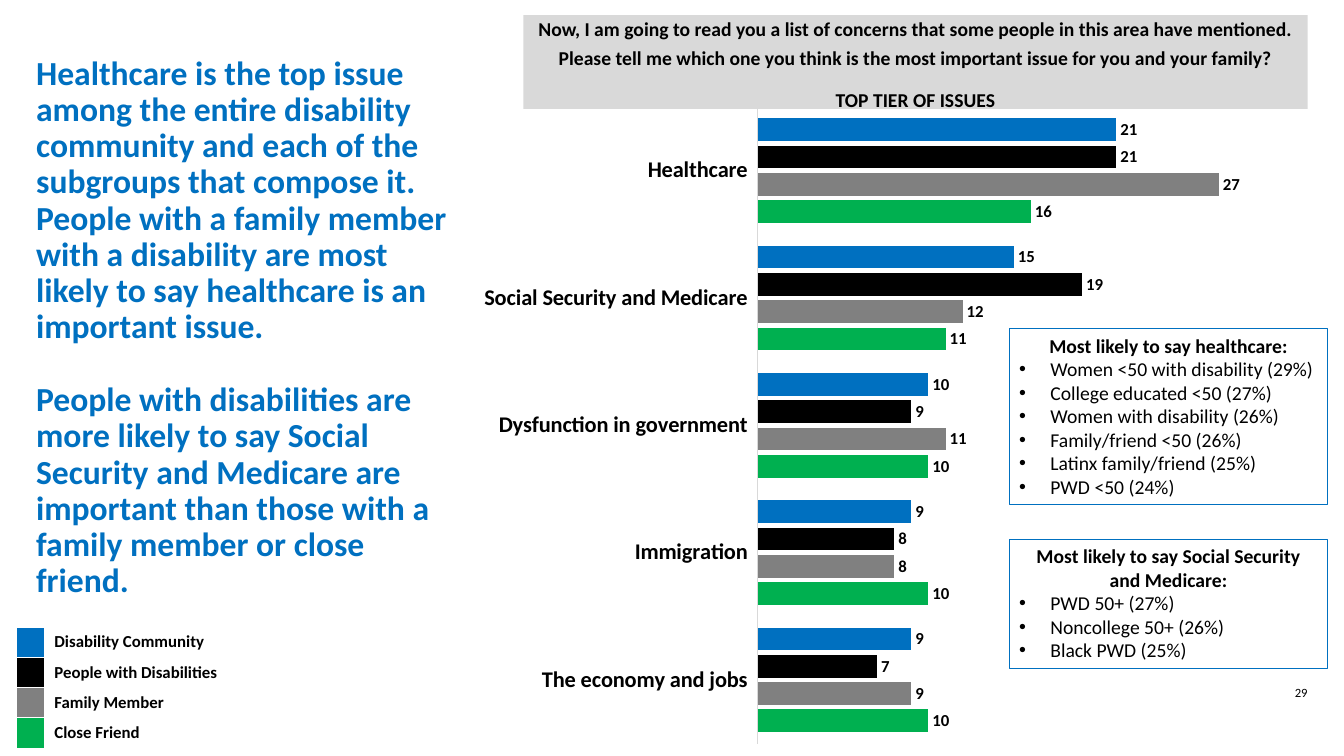
from dataclasses import dataclass

from lxml.etree import SubElement
from pptx import Presentation
from pptx.chart.data import CategoryChartData
from pptx.dml.color import RGBColor
from pptx.enum.chart import XL_CHART_TYPE as ChartType
from pptx.enum.chart import XL_LABEL_POSITION as LabelPos
from pptx.enum.chart import XL_TICK_LABEL_POSITION as TickPos
from pptx.enum.chart import XL_TICK_MARK as TickMark
from pptx.enum.shapes import MSO_SHAPE as Shape
from pptx.enum.text import MSO_ANCHOR as Anchor
from pptx.enum.text import MSO_AUTO_SIZE as AutoSize
from pptx.enum.text import PP_ALIGN as Align
from pptx.oxml.ns import qn
from pptx.util import Inches, Pt


@dataclass(frozen=True)
class Theme:
    font: str = "Calibri"
    blue: str = "0070C0"
    black: str = "000000"
    gray: str = "808080"
    green: str = "00B050"
    light: str = "D9D9D9"
    white: str = "FFFFFF"
    title: int = 24
    category: int = 16
    body: int = 14
    label: int = 12
    number: int = 9


THEME = Theme()

AUDIENCES = {
    "Disability Community": (THEME.blue, (21, 15, 10, 9, 9)),
    "People with Disabilities": (THEME.black, (21, 19, 9, 8, 7)),
    "Family Member": (THEME.gray, (27, 12, 11, 8, 9)),
    "Close Friend": (THEME.green, (16, 11, 10, 10, 10)),
}
ISSUES = ["Healthcare", "Social Security and Medicare", "Dysfunction in government",
          "Immigration", "The economy and jobs"]
TITLE = [
    "Healthcare is the top issue among the entire disability community and each of the "
    "subgroups that compose it. People with a family member with a disability are most "
    "likely to say healthcare is an important issue.",
    "People with disabilities are more likely to say Social Security and Medicare are "
    "important than those with a family member or close friend.",
]
QUESTION = [
    "Now, I am going to read you a list of concerns that some people in this area have "
    "mentioned. Please tell me which one you think is the most important issue for you "
    "and your family?",
    "TOP TIER OF ISSUES",
]
CALLOUTS = [
    (5.35, 1.28, "Most likely to say Social Security and Medicare:",
     ["PWD 50+ (27%)", "Noncollege 50+ (26%)", "Black PWD (25%)"]),
    (3.26, 1.75, "Most likely to say healthcare:",
     ["Women <50 with disability (29%)", "College educated <50 (27%)",
      "Women with disability (26%)", "Family/friend <50 (26%)",
      "Latinx family/friend (25%)", "PWD <50 (24%)"]),
]


def rgb(color):
    return RGBColor.from_string(color)


def set_font(font, size, color=THEME.black, bold=False):
    font.name = THEME.font
    font.size = Pt(size)
    font.bold = bold
    font.color.rgb = rgb(color)


def write(tf, text, size=THEME.body, color=THEME.black, bold=False, align=Align.LEFT,
          spacing=None, before=0, bullet=False, first=False):
    p = tf.paragraphs[0] if first else tf.add_paragraph()
    p.alignment = align
    if spacing:
        p.line_spacing = spacing
    if before and not first:
        p.space_before = Pt(before)
    if bullet:
        pPr = p._p.get_or_add_pPr()
        pPr.set("marL", str(Inches(0.31)))
        pPr.set("indent", str(-Inches(0.31)))
        SubElement(pPr, qn("a:buFont")).set("typeface", "Arial")
        SubElement(pPr, qn("a:buChar")).set("char", "•")
    r = p.add_run()
    r.text = text
    set_font(r.font, size, color, bold)


class SlideBuilder:
    def __init__(self, s, theme):
        self.s = s
        self.theme = theme

    def text(self, box, paragraphs, anchor=Anchor.TOP, **style):
        tf = self.s.shapes.add_textbox(*map(Inches, box)).text_frame
        tf.word_wrap = True
        tf.vertical_anchor = anchor
        for i, text in enumerate(paragraphs):
            write(tf, text, first=i == 0, **style)

    def panel(self, box, fill=None, line=None, anchor=Anchor.TOP):
        sp = self.s.shapes.add_shape(Shape.RECTANGLE, *map(Inches, box))
        sp.shadow.inherit = False
        if fill:
            sp.fill.solid()
            sp.fill.fore_color.rgb = rgb(fill)
        else:
            sp.fill.background()
        if line:
            sp.line.color.rgb = rgb(line)
            sp.line.width = Pt(0.75)
        else:
            sp.line.fill.background()
        sp.text_frame.word_wrap = True
        sp.text_frame.vertical_anchor = anchor
        return sp.text_frame

    def callout(self, top, height, heading, items):
        tf = self.panel((10.01, top, 3.16, height), line=self.theme.blue)
        tf.auto_size = AutoSize.SHAPE_TO_FIT_TEXT
        write(tf, heading, bold=True, align=Align.CENTER, first=True)
        for item in items:
            write(tf, item, bullet=True)

    def legend(self, box, columns, audiences):
        table = self.s.shapes.add_table(len(audiences), 2, *map(Inches, box)).table
        table.first_row = table.horz_banding = False
        for column, width in zip(table.columns, columns):
            column.width = Inches(width)
        for i, (name, (color, _)) in enumerate(audiences.items()):
            swatch, label = table.cell(i, 0), table.cell(i, 1)
            for cell in (swatch, label):
                self.borders(cell)
            swatch.fill.solid()
            swatch.fill.fore_color.rgb = rgb(color)
            end = swatch.text_frame.paragraphs[0]._p.get_or_add_endParaRPr()
            end.set("sz", str(self.theme.label * 100))
            label.fill.background()
            write(label.text_frame, name, size=self.theme.label, bold=True, first=True)

    def borders(self, cell):
        tcPr = cell._tc.get_or_add_tcPr()
        for side in ("lnL", "lnR", "lnT", "lnB"):
            ln = SubElement(tcPr, qn(f"a:{side}"), w=str(Pt(1)))
            fill = SubElement(ln, qn("a:solidFill"))
            SubElement(fill, qn("a:srgbClr"), val=self.theme.white)

    def bar_chart(self, box, categories, audiences, plot_area):
        data = CategoryChartData()
        data.categories = categories
        for name, (_, values) in audiences.items():
            data.add_series(name, values)
        chart = self.s.shapes.add_chart(
            ChartType.BAR_CLUSTERED, *map(Inches, box), data).chart
        chart.has_legend = chart.has_title = False
        set_font(chart.font, 10)
        axis = chart.category_axis
        axis.reverse_order = True
        axis.major_tick_mark = axis.minor_tick_mark = TickMark.NONE
        axis.tick_label_position = TickPos.LOW
        axis.format.line.color.rgb = rgb(self.theme.light)
        axis.format.line.width = Pt(0.75)
        set_font(axis.tick_labels.font, self.theme.category, bold=True)
        scale = chart.value_axis
        scale.minimum_scale, scale.maximum_scale = 0, 30
        scale.has_major_gridlines = scale.visible = False
        plot = chart.plots[0]
        plot.gap_width, plot.overlap, plot.vary_by_categories = 100, -20, False
        for series, (color, _) in zip(plot.series, audiences.values()):
            series.format.fill.solid()
            series.format.fill.fore_color.rgb = rgb(color)
            labels = series.data_labels
            labels.show_value = True
            labels.position = LabelPos.OUTSIDE_END
            set_font(labels.font, self.theme.label, bold=True)
        self.place_plot(chart, plot_area)

    def place_plot(self, chart, plot_area):
        area = chart._chartSpace.chart.plotArea
        for old in area.findall(qn("c:layout")):
            area.remove(old)
        layout = SubElement(area, qn("c:layout"))
        area.insert(0, layout)
        manual = SubElement(layout, qn("c:manualLayout"))
        settings = [("layoutTarget", "inner"), ("xMode", "edge"), ("yMode", "edge")]
        for tag, value in settings + list(zip("xywh", plot_area)):
            SubElement(manual, qn(f"c:{tag}"), val=str(value))


def main():
    prs = Presentation()
    prs.slide_width, prs.slide_height = Inches(13.33), Inches(7.5)
    slide = SlideBuilder(prs.slides.add_slide(prs.slide_layouts[6]), THEME)
    slide.text((12.53, 6.75, 0.75, 0.33), ["29"], size=THEME.number, align=Align.CENTER)
    slide.bar_chart((4.69, 0.93, 8.07, 6.58), ISSUES, AUDIENCES, (0.35, 0.02, 0.63, 0.96))
    slide.legend((0.16, 6.22, 2.38, 1.2), (0.28, 2.1), AUDIENCES)
    tf = slide.panel((5.19, 0.15, 7.78, 0.93), fill=THEME.light, anchor=Anchor.MIDDLE)
    for i, text in enumerate(QUESTION):
        write(tf, text, bold=True, align=Align.CENTER, spacing=1.2, before=10, first=i == 0)
    for callout in CALLOUTS:
        slide.callout(*callout)
    slide.text((0.26, 0.42, 4.42, 5.67), TITLE, anchor=Anchor.MIDDLE, size=THEME.title,
               color=THEME.blue, bold=True, spacing=0.9, before=26)
    prs.save("out.pptx")


if __name__ == "__main__":
    main()
